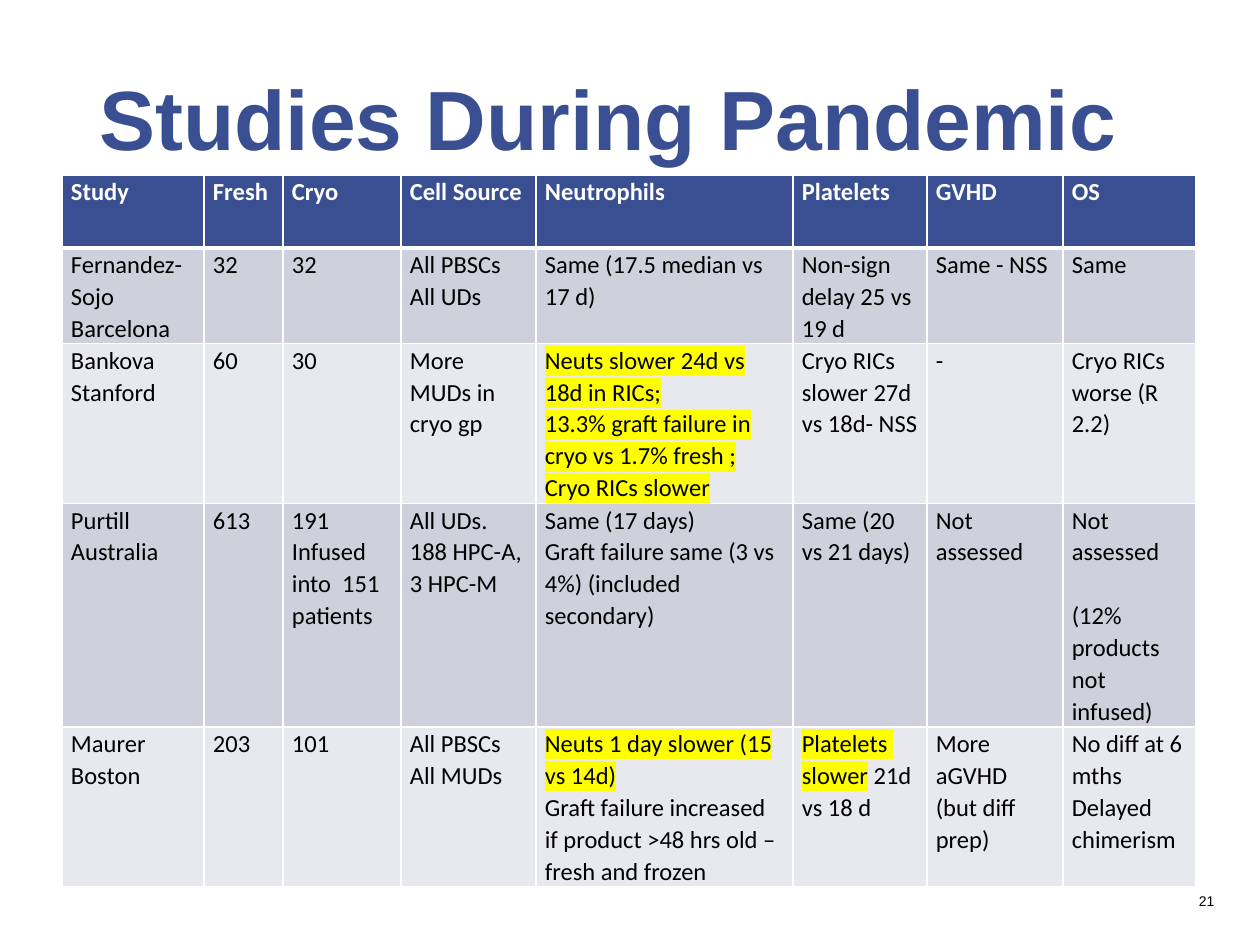
from lxml.etree import SubElement
from pptx import Presentation
from pptx.dml.color import RGBColor as Rgb
from pptx.enum.text import MSO_ANCHOR as Anchor, MSO_AUTO_SIZE as Fit, PP_ALIGN as Align
from pptx.oxml.ns import qn
from pptx.util import Pt

NAVY = Rgb(0x3A, 0x4F, 0x92)
DARK = Rgb(0xCE, 0xD0, 0xDC)
PALE = Rgb(0xE8, 0xE9, 0xEE)
WHITE = Rgb(0xFF, 0xFF, 0xFF)
BLACK = Rgb(0, 0, 0)
YELLOW = Rgb(0xFF, 0xFF, 0)

WIDTHS = [142, 79, 118, 135, 257, 134, 136, 133]
HEIGHTS = [73, 95, 160, 223, 159]
# Text between asterisks is highlighted; \v marks a paragraph set one line lower.
ROWS = [
    ["Study", "Fresh", "Cryo", "Cell Source", "Neutrophils", "Platelets", "GVHD", "OS"],
    ["Fernandez-Sojo\nBarcelona", "32", "32", "All PBSCs\nAll UDs",
     "Same (17.5 median vs 17 d)", "Non-sign delay 25 vs 19 d", "Same - NSS", "Same"],
    ["Bankova\nStanford", "60", "30", "More MUDs in cryo gp",
     "*Neuts slower 24d vs 18d in RICs;*\n"
     "*13.3% graft failure in cryo vs 1.7% fresh ;*\n*Cryo RICs slower*",
     "Cryo RICs slower 27d vs 18d- NSS", "-", "Cryo RICs worse (R 2.2)"],
    ["Purtill\nAustralia", "613", "191\nInfused into  151 patients",
     "All UDs.\n188 HPC-A, 3 HPC-M",
     "Same (17 days)\nGraft failure same (3 vs 4%) (included secondary)",
     "Same (20 vs 21 days)", "Not assessed",
     "Not assessed\n\v(12% products not infused)"],
    ["Maurer\nBoston", "203", "101", "All PBSCs\nAll MUDs",
     "*Neuts 1 day slower (15 vs 14d)*\n"
     "Graft failure increased if product >48 hrs old – fresh and frozen",
     "*Platelets  slower* 21d vs 18 d", "More aGVHD (but diff prep)",
     "No diff at 6 mths\nDelayed chimerism"],
]


def px(n):
    return round(n * 914400 / 126)


def mark(run):
    """Highlight a run that already has its colour."""
    props = run.font._element
    light = SubElement(props, qn("a:highlight"))
    SubElement(light, qn("a:srgbClr"), val=str(YELLOW))
    props.find(qn("a:solidFill")).addnext(light)


def write(frame, text, size=14, face="Calibri", color=BLACK, bold=False,
          align=Align.LEFT, space=1.0):
    for i, line in enumerate(text.split("\n")):
        para = frame.paragraphs[0] if i == 0 else frame.add_paragraph()
        para.alignment = align
        para.line_spacing = space
        if line.startswith("\v"):
            para.space_before = Pt(18.3)
        for j, part in enumerate(line.lstrip("\v").split("*")):
            if not part:
                continue
            run = para.add_run()
            run.text = part
            font = run.font
            font.size, font.name, font.bold = Pt(size), face, bold
            font.color.rgb = color
            if j % 2:
                mark(run)


def edge(cell, **sides):
    """Draw white borders, widths in points, ahead of the cell fill."""
    props = cell._tc.get_or_add_tcPr()
    for i, (side, width) in enumerate(sides.items()):
        line = SubElement(props, qn("a:ln" + side), w=str(Pt(width)))
        fill = SubElement(line, qn("a:solidFill"))
        SubElement(fill, qn("a:srgbClr"), val=str(WHITE))
        props.insert(i, line)


class Deck:
    def __init__(self):
        self.show = Presentation()
        self.show.slide_width, self.show.slide_height = px(1260), px(945)
        self.slide = self.show.slides.add_slide(self.show.slide_layouts[5])

    def title(self, text, x, y, w, h):
        box = self.slide.shapes.title
        box.left, box.top, box.width, box.height = map(px, (x, y, w, h))
        frame = box.text_frame
        frame.auto_size, frame.word_wrap = Fit.NONE, True
        frame.vertical_anchor = Anchor.TOP
        frame.margin_top = px(16)
        write(frame, text, size=48, face="Arial", color=NAVY, bold=True)

    def table(self, rows, x, y):
        grid = self.slide.shapes.add_table(
            len(rows), len(WIDTHS), px(x), px(y),
            px(sum(WIDTHS)), px(sum(HEIGHTS))).table
        for col, w in zip(grid.columns, WIDTHS):
            col.width = px(w)
        for i, (row, h) in enumerate(zip(rows, HEIGHTS)):
            grid.rows[i].height = px(h)
            for j, text in enumerate(row):
                self.cell(grid.cell(i, j), text, i)

    def cell(self, cell, text, row):
        head = row == 0
        cell.margin_left = cell.margin_right = px(9)
        cell.margin_top = cell.margin_bottom = 0
        cell.fill.solid()
        cell.fill.fore_color.rgb = NAVY if head else DARK if row % 2 else PALE
        edge(cell, L=1, R=1, T=3 if row == 1 else 1, B=3 if head else 1)
        write(cell.text_frame, text, color=WHITE if head else BLACK,
              bold=head, space=1.07)

    def number(self, text, x, y, w, h):
        frame = self.slide.shapes.add_textbox(*map(px, (x, y, w, h))).text_frame
        frame.word_wrap = True
        frame.vertical_anchor = Anchor.MIDDLE
        write(frame, text, size=8, face="Arial", align=Align.RIGHT)


def main():
    deck = Deck()
    deck.title("Studies During Pandemic", 87, 50, 1086, 183)
    deck.table(ROWS, 62, 175)
    deck.number("21", 872, 876, 355, 50)
    deck.show.save("out.pptx")


if __name__ == "__main__":
    main()
